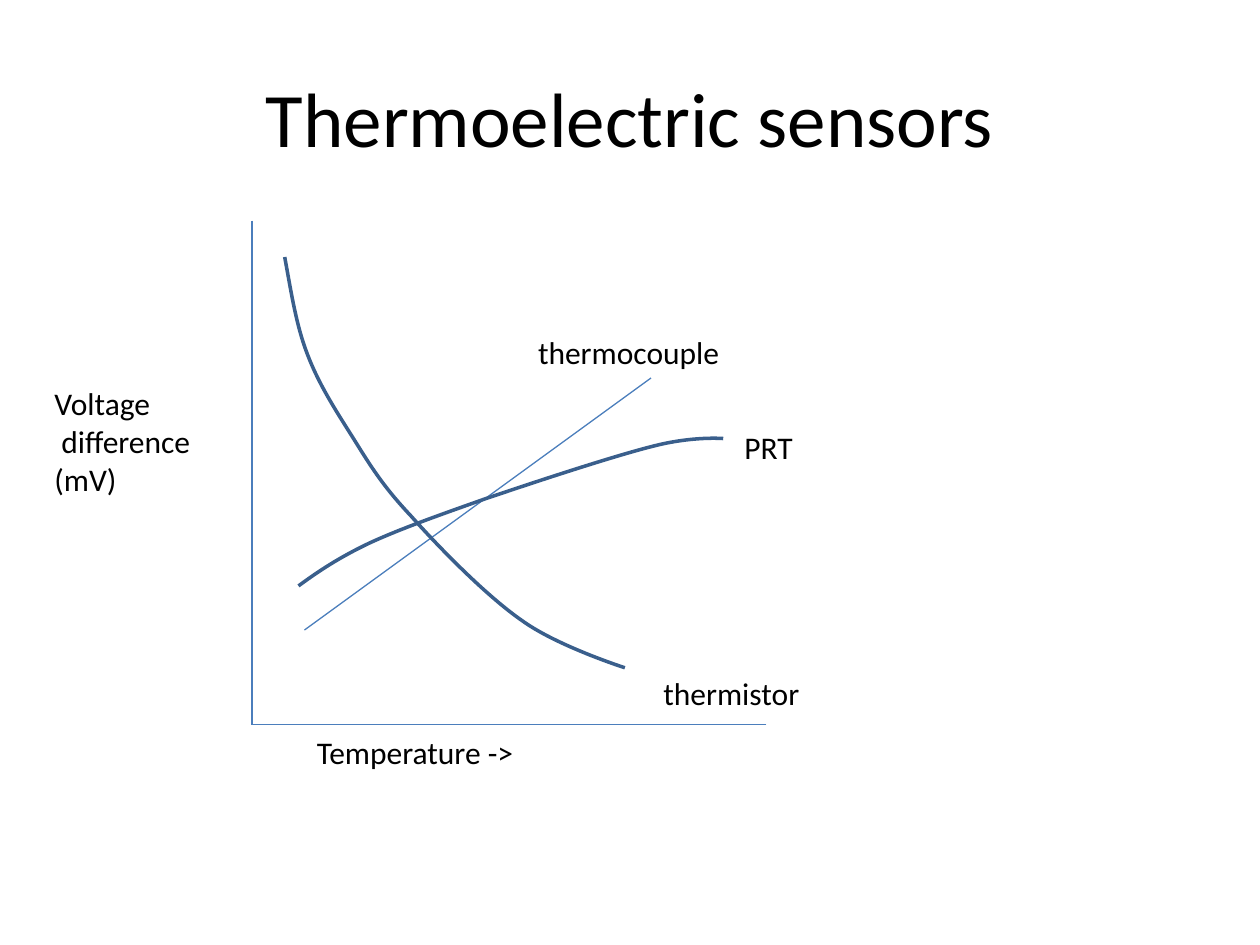
from lxml import etree
from pptx import Presentation
from pptx.dml.color import RGBColor
from pptx.enum import shapes, text
from pptx.oxml import ns
from pptx.util import Pt


def style_line(shape, color, width):
    shape.line.color.rgb = RGBColor.from_string(color)
    shape.line.width = Pt(width)
    properties = shape._element.spPr
    if properties.find(ns.qn("a:effectLst")) is None:
        etree.SubElement(properties, ns.qn("a:effectLst"))


def write(frame, lines, size):
    """Put one paragraph per line into the frame."""
    frame.text = "\n".join(lines)
    for para in frame.paragraphs:
        for name, value in {"name": "Calibri", "size": Pt(size)}.items():
            setattr(para.font, name, value)
        para.font.color.rgb = RGBColor.from_string("000000")


deck = Presentation()
deck.slide_width, deck.slide_height = Pt(720), Pt(540)
page = deck.slides.add_slide(deck.slide_layouts[5])

title = page.shapes.title
title.left, title.top, title.width, title.height = Pt(36), Pt(21.6), Pt(648), Pt(90)
write(title.text_frame, ["Thermoelectric sensors"], 44)
title.text_frame.vertical_anchor = text.MSO_ANCHOR.MIDDLE
title.text_frame.paragraphs[0].alignment = text.PP_ALIGN.CENTER

# Start x, y and end x, y
voltage_axis = (144, 126, 144, 414)
temperature_axis = (438, 414, 144, 414)
thermocouple_line = (174, 360, 372, 216)
for ends in (voltage_axis, temperature_axis, thermocouple_line):
    line = page.shapes.add_connector(
        shapes.MSO_CONNECTOR.STRAIGHT, *[Pt(value) for value in ends])
    style_line(line, "4B7EBC", 0.75)

# Start point, then two control points and an end point for each Bézier segment
thermistor_curve = [
    (162.7, 146.9),
    (166.3, 166.3), (169.2, 185.8), (175.7, 202.5),
    (182.2, 219.6), (191.5, 234), (201.3, 249.5),
    (211, 265), (218.2, 277.2), (234.7, 294.7),
    (250.6, 312.5), (277.9, 340.6), (298.8, 355),
    (319, 369.4), (357.1, 381.6), (357.1, 381.6),
]
prt_curve = [
    (170.6, 334.8),
    (181.4, 326.9), (193, 319), (210.8, 310.5),
    (228.2, 302.4), (250.6, 294.5), (277.2, 285.1),
    (304.6, 275.8), (350.6, 260.6), (373.5, 254.9),
    (396, 249.1), (413.3, 250.6), (413.3, 250.6),
]
for points in (thermistor_curve, prt_curve):
    start, *others = [(Pt(x), Pt(y)) for x, y in points]
    builder = page.shapes.build_freeform(*start)
    builder.add_line_segments(others, close=False)
    curve = builder.convert_to_shape()
    curve.fill.background()
    style_line(curve, "3A5F8C", 2)

    # Turn every three line segments into one cubic segment
    outline = next(curve._element.iter(ns.qn("a:path")))
    segments = outline.findall(ns.qn("a:lnTo"))
    for first in range(0, len(segments), 3):
        cubic = etree.SubElement(outline, ns.qn("a:cubicBezTo"))
        for segment in segments[first:first + 3]:
            cubic.append(segment[0])
            outline.remove(segment)

# Labels: left, top, width, height, lines
labels = [
    (24, 216, 93.6, 72.7, ["Voltage", " difference", "(mV)"]),
    (174, 415.5, 128, 29, ["Temperature ->"]),
    (372, 381.6, 93, 29, ["thermistor"]),
    (300.4, 186.7, 119.5, 29, ["thermocouple"]),
    (418.3, 241.2, 42.5, 29, ["PRT"]),
]
for *place, lines in labels:
    box = page.shapes.add_textbox(*[Pt(value) for value in place])
    box.text_frame.word_wrap = False
    box.text_frame.auto_size = text.MSO_AUTO_SIZE.SHAPE_TO_FIT_TEXT
    write(box.text_frame, lines, 18)

deck.save("out.pptx")
